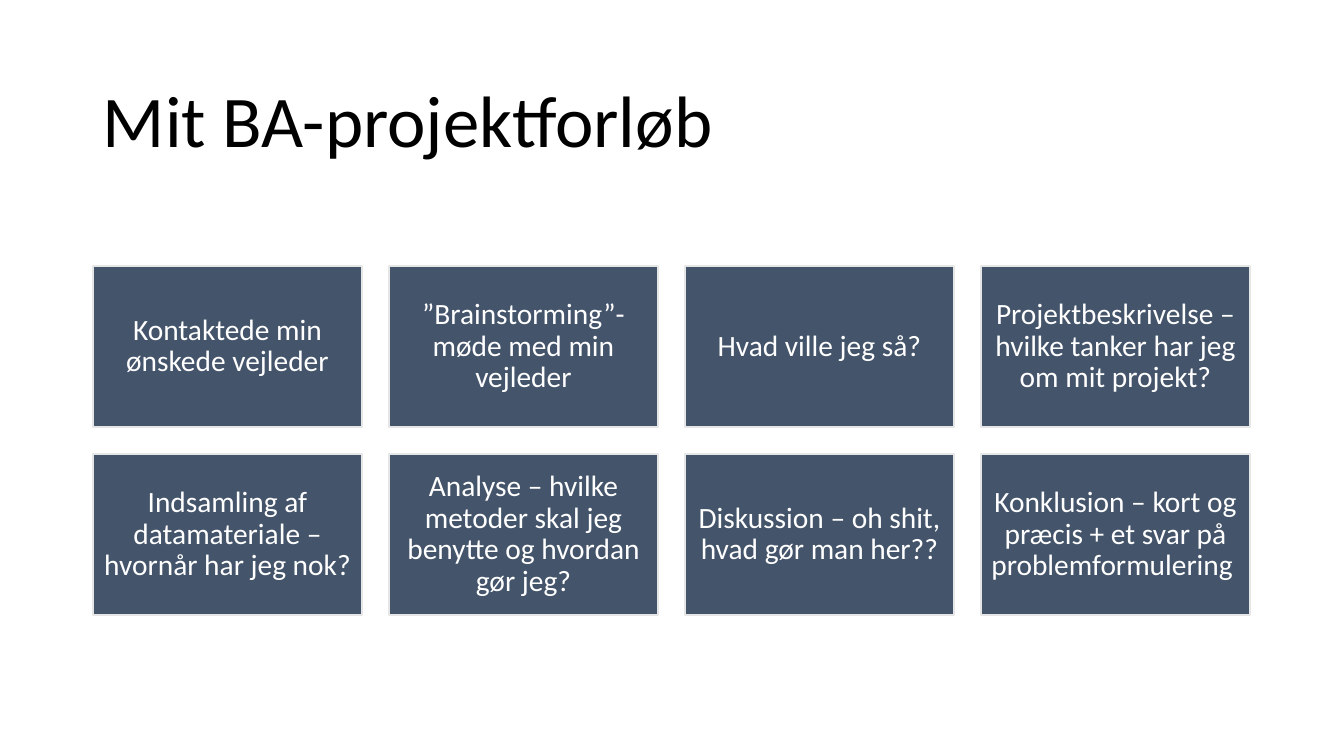
import pptx
import pptx.dml.color
import pptx.enum.shapes
import pptx.enum.text
import pptx.util

PX = 914400 / 100.8
BLACK = pptx.dml.color.RGBColor(0x00, 0x00, 0x00)
WHITE = pptx.dml.color.RGBColor(0xFF, 0xFF, 0xFF)
SLATE = pptx.dml.color.RGBColor(0x44, 0x54, 0x6A)
PALE_GREY = pptx.dml.color.RGBColor(0xE7, 0xE6, 0xE6)

LEFT = 93
COLUMNS = 4
STEP_TOP = 266
STEP_WIDTH, STEP_HEIGHT = 269, 161
GAP = 27
INSET = 9

STEPS = [
    "Kontaktede min ønskede vejleder",
    "”Brainstorming”-møde med min vejleder",
    "Hvad ville jeg så?",
    "Projektbeskrivelse – hvilke tanker har jeg om mit projekt?",
    "Indsamling af datamateriale – hvornår har jeg nok?",
    "Analyse – hvilke metoder skal jeg benytte og hvordan gør jeg?",
    "Diskussion – oh shit, hvad gør man her??",
    "Konklusion – kort og præcis + et svar på problemformulering ",
]


def px(*lengths):
    return [pptx.util.Emu(round(length * PX)) for length in lengths]


def write(shape, text, size, color, align):
    """Put one vertically centred, wrapped paragraph into the shape."""
    frame = shape.text_frame
    frame.word_wrap = True
    frame.vertical_anchor = pptx.enum.text.MSO_ANCHOR.MIDDLE
    frame.text = text
    paragraph = frame.paragraphs[0]
    paragraph.alignment = align
    paragraph.line_spacing = 0.9
    font = paragraph.runs[0].font
    font.name = "Calibri"
    font.size = pptx.util.Pt(size)
    font.color.rgb = color


presentation = pptx.Presentation()
presentation.slide_width, presentation.slide_height = px(1344, 756)
slide = presentation.slides.add_slide(presentation.slide_layouts[6])

title = slide.shapes.add_textbox(*px(LEFT, 61, 1159, 125))
write(title, "Mit BA-projektforløb", 52, BLACK, pptx.enum.text.PP_ALIGN.LEFT)

for index, text in enumerate(STEPS):
    row, column = divmod(index, COLUMNS)
    step = slide.shapes.add_shape(
        pptx.enum.shapes.MSO_SHAPE.RECTANGLE,
        *px(
            LEFT + column * (STEP_WIDTH + GAP),
            STEP_TOP + row * (STEP_HEIGHT + GAP),
            STEP_WIDTH,
            STEP_HEIGHT,
        ),
    )
    step.shadow.inherit = False
    step.fill.solid()
    step.fill.fore_color.rgb = SLATE
    step.line.color.rgb = PALE_GREY
    step.line.width = pptx.util.Pt(1)
    frame = step.text_frame
    frame.margin_left, frame.margin_top, frame.margin_right, frame.margin_bottom = px(*[INSET] * 4)
    write(step, text, 21, WHITE, pptx.enum.text.PP_ALIGN.CENTER)

presentation.save("out.pptx")
